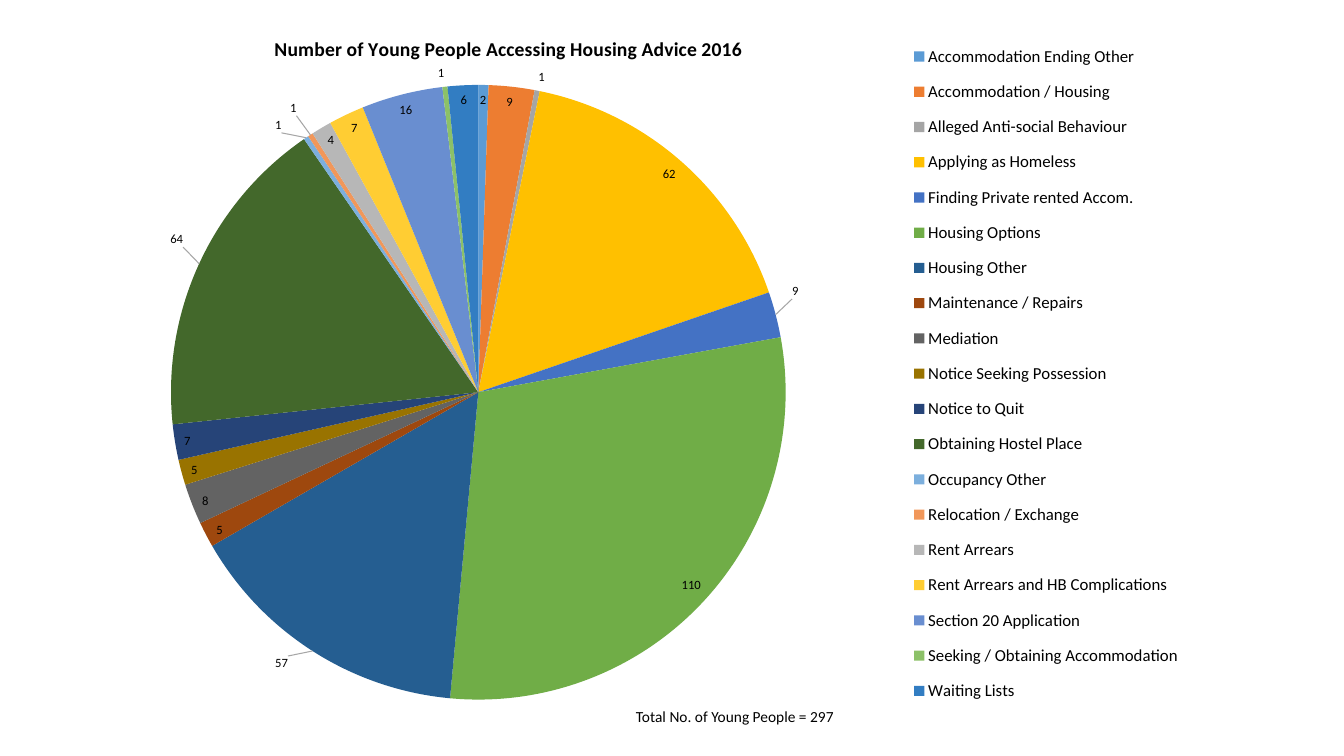
from lxml.etree import SubElement
from pptx import Presentation
from pptx.chart.data import CategoryChartData
from pptx.dml.color import RGBColor
from pptx.enum.chart import XL_CHART_TYPE, XL_LABEL_POSITION, XL_LEGEND_POSITION
from pptx.enum.shapes import MSO_SHAPE
from pptx.enum.text import MSO_ANCHOR, PP_ALIGN
from pptx.oxml import parse_xml
from pptx.oxml.ns import nsdecls, qn
from pptx.util import Pt

BLACK = RGBColor(0, 0, 0)
WHITE = RGBColor(255, 255, 255)
LEADER_GREY = "A6A6A6"
ADVICE = [
    ("Accommodation Ending Other", 2, RGBColor(0x5B, 0x9B, 0xD5)),
    ("Accommodation / Housing", 9, RGBColor(0xED, 0x7D, 0x31)),
    ("Alleged Anti-social Behaviour", 1, RGBColor(0xA5, 0xA5, 0xA5)),
    ("Applying as Homeless", 62, RGBColor(0xFF, 0xC0, 0x00)),
    ("Finding Private rented Accom.", 9, RGBColor(0x44, 0x72, 0xC4)),
    ("Housing Options", 110, RGBColor(0x70, 0xAD, 0x47)),
    ("Housing Other", 57, RGBColor(0x25, 0x5E, 0x91)),
    ("Maintenance / Repairs", 5, RGBColor(0x9E, 0x48, 0x0E)),
    ("Mediation", 8, RGBColor(0x63, 0x63, 0x63)),
    ("Notice Seeking Possession", 5, RGBColor(0x99, 0x73, 0x00)),
    ("Notice to Quit", 7, RGBColor(0x26, 0x44, 0x78)),
    ("Obtaining Hostel Place", 64, RGBColor(0x43, 0x68, 0x2B)),
    ("Occupancy Other", 1, RGBColor(0x7C, 0xAF, 0xDD)),
    ("Relocation / Exchange", 1, RGBColor(0xF1, 0x97, 0x5A)),
    ("Rent Arrears", 4, RGBColor(0xB7, 0xB7, 0xB7)),
    ("Rent Arrears and HB Complications", 7, RGBColor(0xFF, 0xCD, 0x33)),
    ("Section 20 Application", 16, RGBColor(0x69, 0x8E, 0xD0)),
    ("Seeking / Obtaining Accommodation", 1, RGBColor(0x8C, 0xC1, 0x68)),
    ("Waiting Lists", 6, RGBColor(0x32, 0x7D, 0xC2)),
]
LABEL_SHIFTS = {
    "Finding Private rented Accom.": (0.01, -0.02),
    "Housing Other": (-0.02, 0),
    "Obtaining Hostel Place": (-0.01, -0.02),
    "Occupancy Other": (-0.02, 0),
    "Relocation / Exchange": (-0.01, -0.02),
}


class SlideBuilder:
    """Adds consistently styled elements to one slide."""

    def __init__(self, slide, font_name, color):
        self.slide = slide
        self.font_name = font_name
        self.color = color

    def style(self, font, size, bold=False):
        font.name = self.font_name
        font.size = Pt(size)
        font.bold = bold
        font.color.rgb = self.color

    def layout(self, **settings):
        layout = parse_xml(f"<c:layout {nsdecls('c')}/>")
        manual = SubElement(layout, qn("c:manualLayout"))
        for tag, value in settings.items():
            SubElement(manual, qn(f"c:{tag}")).set("val", str(value))
        return layout

    def place(self, element, after, **settings):
        for existing in element.findall(qn("c:layout")):
            element.remove(existing)
        element.find(qn(after)).addnext(self.layout(**settings))

    def pie(self, title, rows, shifts, left, top, width, height):
        data = CategoryChartData()
        data.categories = [name for name, count, color in rows]
        data.add_series("Series 1", [count for name, count, color in rows])
        chart = self.slide.shapes.add_chart(
            XL_CHART_TYPE.PIE, Pt(left), Pt(top), Pt(width), Pt(height), data
        ).chart
        self.style(chart.font, 10)
        self.title(chart, title)
        self.legend(chart)
        plot_area = chart.plots[0]._element.getparent()
        for existing in plot_area.findall(qn("c:layout")):
            plot_area.remove(existing)
        plot_area.insert(0, self.layout(
            layoutTarget="inner", xMode="edge", yMode="edge",
            x=0.022, y=0.086, w=0.594, h=0.87))
        chart.plots[0].vary_by_categories = True
        series = chart.plots[0].series[0]
        self.labels(series)
        for index, (name, count, color) in enumerate(rows):
            point = series.points[index]
            point.format.fill.solid()
            point.format.fill.fore_color.rgb = color
            if name in shifts:
                self.shift_label(series, index, *shifts[name])

    def title(self, chart, text):
        frame = chart.chart_title.text_frame
        frame.text = text
        self.style(frame.paragraphs[0].runs[0].font, 14, True)
        chart.chart_title.include_in_layout = False
        self.place(chart.chart_title._element, "c:tx",
                   xMode="edge", yMode="edge", x=0.125, y=0.01)

    def legend(self, chart):
        chart.has_legend = True
        legend = chart.legend
        legend.position = XL_LEGEND_POSITION.BOTTOM
        legend.include_in_layout = False
        self.style(legend.font, 12)
        self.place(legend._element, "c:legendPos", xMode="edge", yMode="edge",
                   x=0.71, y=0.01, w=0.28, h=0.97)

    def labels(self, series):
        labels = series.data_labels
        labels.show_value = True
        labels.position = XL_LABEL_POSITION.BEST_FIT
        self.style(labels.font, 9)
        leader = labels._element.find(qn("c:showLeaderLines"))
        if leader is None:
            leader = SubElement(labels._element, qn("c:showLeaderLines"))
        leader.set("val", "1")
        leader.addnext(parse_xml(
            f"<c:leaderLines {nsdecls('c', 'a')}><c:spPr><a:ln w='9525'><a:solidFill>"
            f"<a:srgbClr val='{LEADER_GREY}'/></a:solidFill></a:ln></c:spPr></c:leaderLines>"))

    def shift_label(self, series, index, across, down):
        label = series.points[index].data_label
        label.position = XL_LABEL_POSITION.BEST_FIT
        self.style(label.font, 9)
        element = series.data_labels._element.find(f"{qn('c:dLbl')}[last()]")
        self.place(element, "c:idx", x=across, y=down)

    def note(self, text, left, top, width, height):
        box = self.slide.shapes.add_shape(
            MSO_SHAPE.RECTANGLE, Pt(left), Pt(top), Pt(width), Pt(height))
        box.shadow.inherit = False
        box.fill.solid()
        box.fill.fore_color.rgb = WHITE
        box.line.fill.background()
        frame = box.text_frame
        frame.word_wrap = True
        frame.vertical_anchor = MSO_ANCHOR.TOP
        frame.text = text
        para = frame.paragraphs[0]
        para.alignment = PP_ALIGN.LEFT
        para.line_spacing = 1.07
        para.space_after = Pt(8)
        self.style(para.runs[0].font, 11)


def main():
    deck = Presentation()
    deck.slide_width, deck.slide_height = Pt(960), Pt(540)
    page = SlideBuilder(deck.slides.add_slide(deck.slide_layouts[6]), "Calibri", BLACK)
    page.pie("Number of Young People Accessing Housing Advice 2016", ADVICE,
             LABEL_SHIFTS, 98, 17.3, 763.9, 504.7)
    page.note("Total No. of Young People = 297", 447.1, 500.4, 160.6, 21.6)
    deck.save("out.pptx")


if __name__ == "__main__":
    main()
